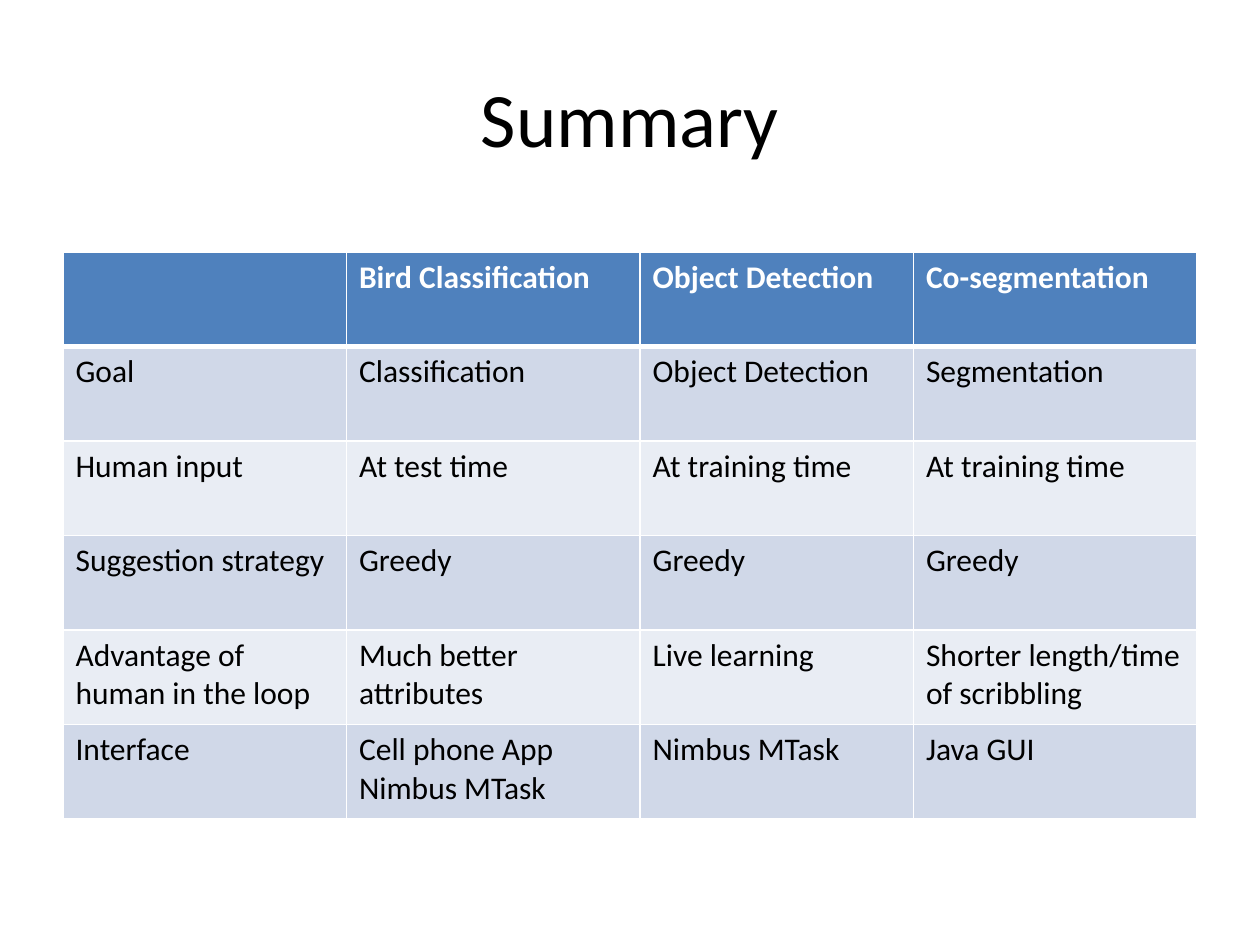
from lxml import etree
from pptx import Presentation
from pptx.dml.color import RGBColor
from pptx.enum.text import MSO_ANCHOR, PP_ALIGN
from pptx.oxml.ns import qn
from pptx.util import Pt

PX = 9144
MIDDLE = MSO_ANCHOR.MIDDLE
CENTER = PP_ALIGN.CENTER
FONT = "Calibri"
COLORS = {
    "text": "000000",
    "header": "4F81BD",
    "header_text": "FFFFFF",
    "odd_row": "D0D8E8",
    "even_row": "E9EDF4",
    "border": "FFFFFF",
}
COLUMN_WIDTHS = [225, 233, 217, 225]
ROW_HEIGHT = 75
ROWS = [
    ["", "Bird Classification", "Object Detection", "Co-segmentation"],
    ["Goal", "Classification", "Object Detection", "Segmentation"],
    ["Human input", "At test time", "At training time", "At training time"],
    ["Suggestion strategy", "Greedy", "Greedy", "Greedy"],
    ["Advantage of human in the loop", "Much better attributes",
     "Live learning", "Shorter length/time of scribbling"],
    ["Interface", "Cell phone App\nNimbus MTask", "Nimbus MTask", "Java GUI"],
]


def format_text(text_frame, size, color, bold=False):
    for paragraph in text_frame.paragraphs:
        for run in paragraph.runs:
            run.font.name = FONT
            run.font.size = Pt(size)
            run.font.bold = bold
            run.font.color.rgb = RGBColor.from_string(COLORS[color])


def add_border(cell, side, width):
    properties = cell._tc.get_or_add_tcPr()
    line = etree.SubElement(properties, qn(f"a:ln{side}"), w=str(Pt(width)))
    fill = etree.SubElement(line, qn("a:solidFill"))
    etree.SubElement(fill, qn("a:srgbClr"), val=COLORS["border"])


presentation = Presentation()
presentation.slide_width = 1000 * PX
presentation.slide_height = 750 * PX
slide = presentation.slides.add_slide(presentation.slide_layouts[6])

title = slide.shapes.add_textbox(50 * PX, 30 * PX, 900 * PX, 125 * PX)
title_frame = title.text_frame
title_frame.word_wrap = True
title_frame.vertical_anchor = MIDDLE
title_frame.text = "Summary"
title_frame.paragraphs[0].alignment = CENTER
format_text(title_frame, 44, "text")

table = slide.shapes.add_table(
    len(ROWS), len(COLUMN_WIDTHS), 50 * PX, 200 * PX,
    sum(COLUMN_WIDTHS) * PX, len(ROWS) * ROW_HEIGHT * PX,
).table
for column, width in zip(table.columns, COLUMN_WIDTHS):
    column.width = width * PX

for row_index, row_texts in enumerate(ROWS):
    is_header = row_index == 0
    if is_header:
        fill_color = "header"
    else:
        fill_color = "odd_row" if row_index % 2 else "even_row"
    for column_index, cell_text in enumerate(row_texts):
        cell = table.cell(row_index, column_index)
        cell.text_frame.text = cell_text
        format_text(cell.text_frame, 18, "header_text" if is_header else "text", is_header)
        for side in "LRTB":
            thick = (row_index, side) in [(0, "B"), (1, "T")]
            add_border(cell, side, 3 if thick else 1)
        cell.fill.solid()
        cell.fill.fore_color.rgb = RGBColor.from_string(COLORS[fill_color])

presentation.save("out.pptx")
